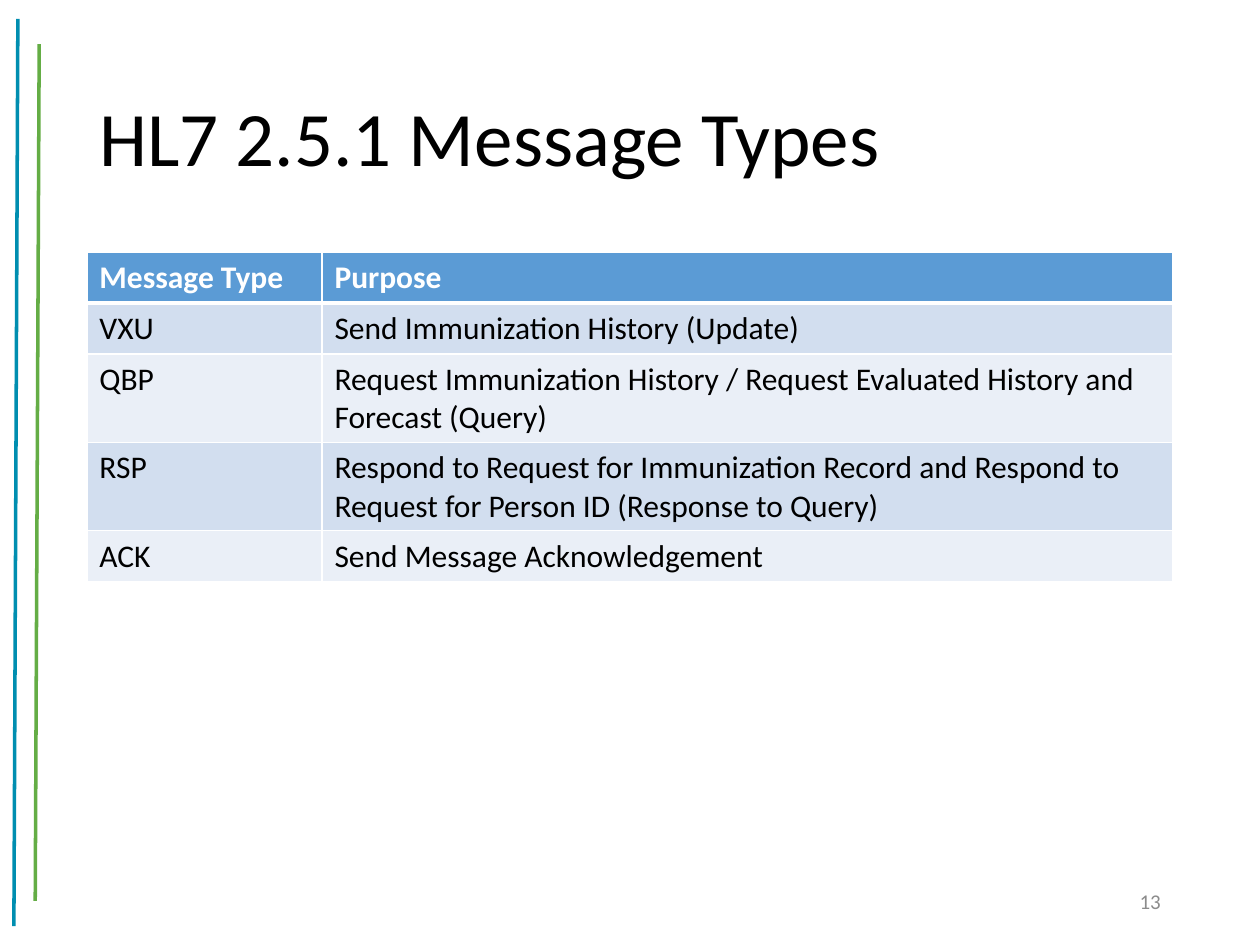
"""Build the slide listing the HL7 2.5.1 message types."""
from typing import NamedTuple

import lxml.etree
import pptx
import pptx.dml.color
import pptx.enum.shapes
import pptx.enum.text
import pptx.oxml.ns
import pptx.util

Cm = pptx.util.Cm
Pt = pptx.util.Pt
Color = pptx.dml.color.RGBColor
Align = pptx.enum.text.PP_ALIGN
qn = pptx.oxml.ns.qn

TEAL = Color(0x00, 0x8E, 0xB0)
GREEN = Color(0x64, 0xAD, 0x45)
BLUE = Color(0x5B, 0x9B, 0xD5)
BANDS = (Color(0xD2, 0xDE, 0xEF), Color(0xEA, 0xEF, 0xF7))
BLACK = Color(0, 0, 0)
WHITE = Color(0xFF, 0xFF, 0xFF)
GRAY = Color(0x8C, 0x8C, 0x8C)
FONT = "Calibri"


class Stripe(NamedTuple):
    start: tuple[float, float]
    end: tuple[float, float]
    color: Color


class Label(NamedTuple):
    text: str
    left: float
    top: float
    width: float
    height: float
    size: int
    color: Color
    align: Align
    pitch: float


class Entry(NamedTuple):
    kind: str
    purpose: str


STRIPES = (
    Stripe((0.36, 0.38), (0.28, 18.67), TEAL),
    Stripe((0.79, 0.89), (0.71, 18.16), GREEN),
)
LABELS = (
    Label("HL7 2.5.1 Message Types", 1.75, 1.02, 21.9, 3.68, 44, BLACK, Align.LEFT, 0.9),
    Label("13", 17.93, 17.65, 5.72, 1.02, 12, GRAY, Align.RIGHT, 1.0),
)
ENTRIES = (
    Entry("Message Type", "Purpose"),
    Entry("VXU", "Send Immunization History (Update)"),
    Entry("QBP", "Request Immunization History / Request Evaluated History and Forecast (Query)"),
    Entry("RSP", "Respond to Request for Immunization Record and Respond to "
                 "Request for Person ID (Response to Query)"),
    Entry("ACK", "Send Message Acknowledgement"),
)
WIDTHS = (4.74, 17.16)
ROW = 1.03


def add_run(para, text: str, size: int, color: Color, bold: bool = False) -> None:
    run = para.add_run()
    run.text = text
    run.font.name = FONT
    run.font.size = Pt(size)
    run.font.bold = bold
    run.font.color.rgb = color


def draw_stripe(slide, stripe: Stripe) -> None:
    ends = [Cm(value) for value in stripe.start + stripe.end]
    line = slide.shapes.add_connector(pptx.enum.shapes.MSO_CONNECTOR.STRAIGHT, *ends)
    line.line.color.rgb = stripe.color
    line.line.width = Pt(2)
    lxml.etree.SubElement(line._element.spPr, qn("a:effectLst"))


def draw_label(slide, label: Label) -> None:
    box = slide.shapes.add_textbox(
        Cm(label.left), Cm(label.top), Cm(label.width), Cm(label.height))
    frame = box.text_frame
    frame.word_wrap = True
    frame.vertical_anchor = pptx.enum.text.MSO_ANCHOR.MIDDLE
    para = frame.paragraphs[0]
    para.alignment = label.align
    para.line_spacing = label.pitch
    add_run(para, label.text, label.size, label.color)


def edge_cell(cell, top: int, bottom: int) -> None:
    props = cell._tc.get_or_add_tcPr()
    for side, width in (("L", 1), ("R", 1), ("T", top), ("B", bottom)):
        edge = lxml.etree.SubElement(props, qn(f"a:ln{side}"), w=str(Pt(width)))
        fill = lxml.etree.SubElement(edge, qn("a:solidFill"))
        lxml.etree.SubElement(fill, qn("a:srgbClr"), val=str(WHITE))


def draw_table(slide, entries: tuple[Entry, ...]) -> None:
    table = slide.shapes.add_table(
        len(entries), len(WIDTHS), Cm(1.75), Cm(5.08),
        Cm(sum(WIDTHS)), Cm(ROW * len(entries))).table
    for column, width in zip(table.columns, WIDTHS):
        column.width = Cm(width)
    for index, entry in enumerate(entries):
        head = index == 0
        table.rows[index].height = Cm(ROW)
        for cell, text in zip(table.rows[index].cells, entry):
            edge_cell(cell, 3 if index == 1 else 1, 3 if head else 1)
            cell.fill.solid()
            cell.fill.fore_color.rgb = BLUE if head else BANDS[(index - 1) % 2]
            add_run(cell.text_frame.paragraphs[0], text, 18, WHITE if head else BLACK, head)


def main() -> None:
    deck = pptx.Presentation()
    deck.slide_width, deck.slide_height = Cm(25.4), Cm(19.05)
    slide = deck.slides.add_slide(deck.slide_layouts[6])
    for stripe in STRIPES:
        draw_stripe(slide, stripe)
    title, number = LABELS
    draw_label(slide, title)
    draw_table(slide, ENTRIES)
    draw_label(slide, number)
    deck.save("out.pptx")


if __name__ == "__main__":
    main()
